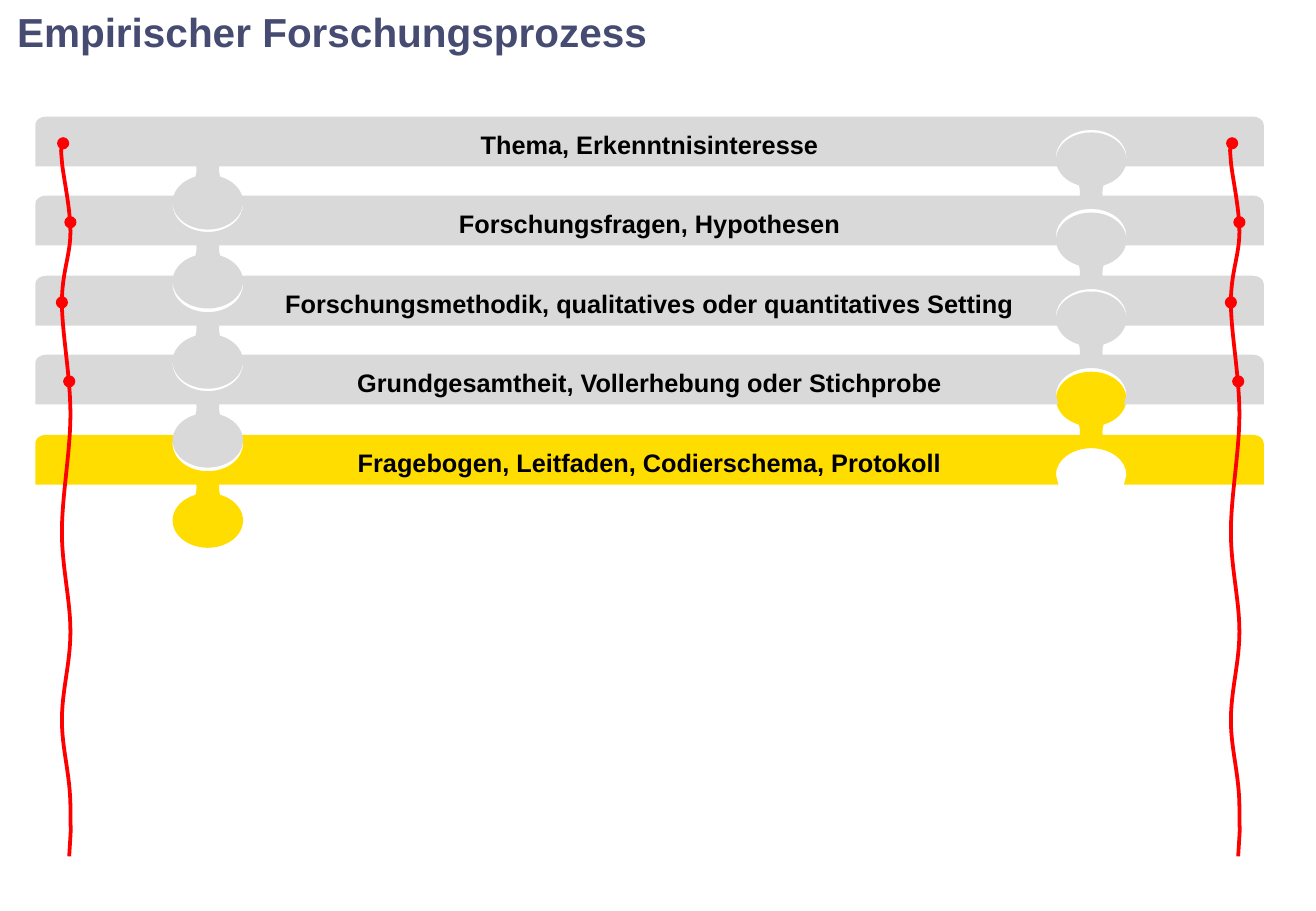
from lxml.etree import SubElement
from pptx import Presentation
from pptx.dml.color import RGBColor
from pptx.enum.shapes import MSO_SHAPE
from pptx.enum.text import MSO_ANCHOR, MSO_AUTO_SIZE, PP_ALIGN
from pptx.oxml.ns import qn
from pptx.util import Pt

PX = 9144  # EMU per px, 100 px to the inch

GREY = RGBColor(0xD9, 0xD9, 0xD9)
YELLOW = RGBColor(0xFF, 0xDD, 0x00)
RED = RGBColor(0xFF, 0x00, 0x00)
BLACK = RGBColor(0x00, 0x00, 0x00)
INDIGO = RGBColor(0x46, 0x4B, 0x71)

# Top to bottom: text, colour, dot colour, left edge of the left dot
STEPS = [
    ("Thema, Erkenntnisinteresse", GREY, RED, 47),
    ("Forschungsfragen, Hypothesen", GREY, RED, 53),
    ("Forschungsmethodik, qualitatives oder quantitatives Setting", GREY, RED, 46),
    ("Grundgesamtheit, Vollerhebung oder Stichprobe", GREY, RED, 52),
    ("Fragebogen, Leitfaden, Codierschema, Protokoll", YELLOW, YELLOW, 51),
]
ROW_LEFT, ROW_TOP, ROW_WIDTH, ROW_HEIGHT = 29, 96, 1011, 41
TWO_ROW_PITCH = 131
KNOB_INSET, KNOB_WIDTH, KNOB_HEIGHT = 142, 58, 45
DOT_SIZE, THREAD_DISTANCE = 10, 962

# Segments of two numbers are corners, segments of six are curves.
# Neck: offsets from the middle of the knob and the top of the row
NECK = [(-13, 66), (-2, 62, 3, 41, 3, 36), (4, 31, -7, 33, -10, 36),
        (-8, 46, -10, 54, -16, 56)]
THREAD = [(6, 0), (4, 8, 4, 3, 5, 16), (6, 28, 12, 54, 12, 74),
          (12, 93, 5, 107, 5, 132), (5, 157, 12, 192, 12, 224),
          (12, 255, 5, 291, 5, 321), (5, 350, 12, 377, 12, 403),
          (12, 429, 5, 451, 5, 476), (5, 500, 12, 521, 12, 548),
          (12, 576, 13, 555, 11, 588)]


def paint(shape, color):
    shape.shadow.inherit = False
    shape.fill.solid()
    shape.fill.fore_color.rgb = color
    shape.line.fill.background()


def add_outline(shapes, segments, left, top, closed=True):
    """Build a freeform from the segment ends, then bend its curved segments."""
    ends = [((left + segment[-2]) * PX, (top + segment[-1]) * PX) for segment in segments]
    builder = shapes.build_freeform(*ends[0], scale=1.0)
    builder.add_line_segments(ends[1:], close=closed)
    shape = builder.convert_to_shape()

    origin_x, origin_y = min(x for x, y in ends), min(y for x, y in ends)
    path = next(shape.element.iter(qn("a:path")))
    for node, segment in zip(list(path)[1:], segments[1:]):
        if len(segment) == 6:
            curve = SubElement(path, qn("a:cubicBezTo"))
            for x, y in zip(segment[::2], segment[1::2]):
                SubElement(curve, qn("a:pt"), x=str((left + x) * PX - origin_x),
                           y=str((top + y) * PX - origin_y))
            path.replace(node, curve)
    return shape


def add_ellipse(shapes, left, top, width, height, color):
    ellipse = shapes.add_shape(MSO_SHAPE.OVAL, left * PX, top * PX, width * PX, height * PX)
    paint(ellipse, color)


def write_text(shape, text, size, color, align, spacing=1.0, left_inset=10, wrap=True):
    frame = shape.text_frame
    frame.text = text
    frame.word_wrap = wrap
    frame.auto_size = MSO_AUTO_SIZE.NONE
    frame.vertical_anchor = MSO_ANCHOR.MIDDLE
    frame.margin_left, frame.margin_right = left_inset * PX, 10 * PX
    frame.margin_top = frame.margin_bottom = 5 * PX
    paragraph = frame.paragraphs[0]
    paragraph.alignment = align
    paragraph.line_spacing = spacing
    font = paragraph.runs[0].font
    font.name, font.size, font.bold = "Arial", Pt(size), True
    font.color.rgb = color


def bar_segments(width, height, notched):
    notch, socket = KNOB_INSET, width - KNOB_INSET
    top_notch = [(notch - 27, 0), (notch - 29, 7),
                 (notch - 29, 20, notch - 16, 30, notch, 30),
                 (notch + 16, 30, notch + 29, 20, notch + 29, 7), (notch + 27, 0)]
    return [(9, 0), *(top_notch if notched else []), (width - 9, 0),
            (width - 4, 0, width, 3, width, 7), (width, height),
            (socket + 27, height), (socket + 29, height - 8),
            (socket + 29, height - 20, socket + 16, height - 30, socket, height - 30),
            (socket - 16, height - 30, socket - 29, height - 20, socket - 29, height - 8),
            (socket - 27, height), (0, height), (0, 7), (0, 3, 4, 0, 9, 0)]


def add_knob(shapes, middle, top, height, color, upward):
    """Knob below the row, or mirrored above it."""
    knob_top = -7 - KNOB_HEIGHT if upward else height + 7
    add_ellipse(shapes, middle - KNOB_WIDTH // 2, top + knob_top,
                KNOB_WIDTH, KNOB_HEIGHT, color)
    for side in (1, -1):
        neck = [tuple(side * value if index % 2 == 0 else height - value if upward else value
                      for index, value in enumerate(segment)) for segment in NECK]
        paint(add_outline(shapes, neck, middle, top), color)


def add_puzzle_row(slide, left, top, width, height, step, first):
    text, color, dot_color, dot_left = step
    shapes = slide.shapes.add_group_shape().shapes
    bar = add_outline(shapes, bar_segments(width, height, not first), left, top)
    paint(bar, color)
    write_text(bar, text, 15, BLACK, PP_ALIGN.CENTER, spacing=1.2)
    add_knob(shapes, left + KNOB_INSET, top, height, color, upward=False)
    if not first:
        add_knob(shapes, left + width - KNOB_INSET, top, height, color, upward=True)
    for x in (dot_left, dot_left + THREAD_DISTANCE):
        add_ellipse(shapes, x, top + 17, DOT_SIZE, DOT_SIZE, dot_color)


def add_thread(slide, left, top):
    thread = add_outline(slide.shapes, THREAD, left, top, closed=False)
    thread.shadow.inherit = False
    thread.fill.background()
    thread.line.color.rgb = RED
    thread.line.width = Pt(2.25)


def add_title(slide, left, top, width, height):
    title = slide.shapes.title
    title.left, title.top = left * PX, top * PX
    title.width, title.height = width * PX, height * PX
    write_text(title, "Empirischer Forschungsprozess", 24, INDIGO, PP_ALIGN.LEFT,
               left_inset=14, wrap=False)


def main():
    presentation = Presentation()
    presentation.slide_width, presentation.slide_height = 1083 * PX, 750 * PX
    slide = presentation.slides.add_slide(presentation.slide_layouts[5])
    add_title(slide, 0, 0, 547, 51)

    # Puzzle rows, lowest first so that each knob covers the row below
    for index, step in reversed(list(enumerate(STEPS))):
        add_puzzle_row(slide, ROW_LEFT, ROW_TOP + index * TWO_ROW_PITCH // 2,
                       ROW_WIDTH, ROW_HEIGHT, step, first=index == 0)

    # Red threads
    for left in (46, 46 + THREAD_DISTANCE):
        add_thread(slide, left, 117)
    presentation.save("out.pptx")


if __name__ == "__main__":
    main()
